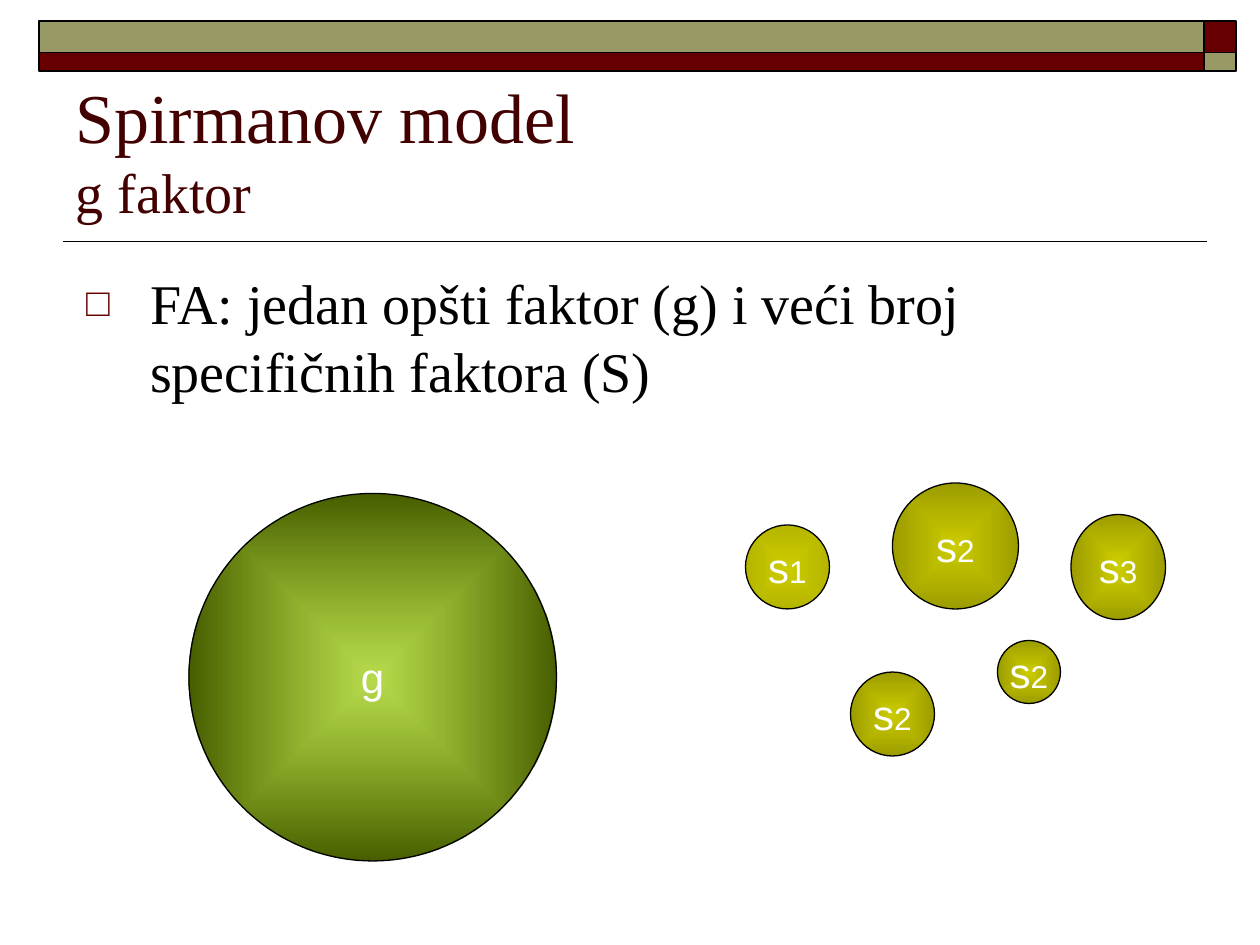
from lxml import etree
from pptx import Presentation
from pptx.dml.color import RGBColor
from pptx.enum.shapes import MSO_CONNECTOR, MSO_SHAPE
from pptx.enum.text import MSO_ANCHOR, MSO_AUTO_SIZE, PP_ALIGN
from pptx.oxml.ns import qn
from pptx.util import Pt

PX = 7620  # 120 px to the inch
SLIDE_SIZE = (1200, 900)

RECT, OVAL = MSO_SHAPE.RECTANGLE, MSO_SHAPE.OVAL
STRAIGHT = MSO_CONNECTOR.STRAIGHT
LEFT, CENTER = PP_ALIGN.LEFT, PP_ALIGN.CENTER
TOP, MIDDLE, BOTTOM = MSO_ANCHOR.TOP, MSO_ANCHOR.MIDDLE, MSO_ANCHOR.BOTTOM
NO_AUTOFIT = MSO_AUTO_SIZE.NONE

BLACK = RGBColor(0x00, 0x00, 0x00)
WHITE = RGBColor(0xFF, 0xFF, 0xFF)
MAROON = RGBColor(0x66, 0x00, 0x00)
DARK_MAROON = RGBColor(0x42, 0x00, 0x00)
KHAKI = RGBColor(0x99, 0x99, 0x66)
LIME = RGBColor(0x99, 0xCC, 0x00)
DARK_GREEN = RGBColor(0x47, 0x5E, 0x00)
YELLOW = RGBColor(0xCC, 0xCC, 0x00)
OLIVE = RGBColor(0x9C, 0x9C, 0x00)
LIGHT_OLIVE = RGBColor(0xB5, 0xB5, 0x00)

SERIF, SANS = "Times New Roman", "Arial"

TITLE, SUBTITLE = "Spirmanov model", "g faktor"
TITLE_BOX = (60, 70, 1080, 150)
BODY = "FA: jedan opšti faktor (g) i veći broj specifičnih faktora (S)"
BODY_BOX = (70, 250, 1080, 160)
BULLET_INDENT = 61
RULE = (1150, 230, 60, 230)

# Header band: columns (left, width), rows (top, height), colours by row
BAND_COLUMNS = [(37, 1110), (1147, 30)]
BAND_ROWS = [(20, 30), (50, 18)]
BAND_COLOURS = [(KHAKI, MAROON), (MAROON, KHAKI)]

# letter, index, box, centre colour, centre opacity in %, edge colour
FACTORS = [
    ("g", "", (180, 470, 350, 350), LIME, 69, DARK_GREEN),
    ("s", "1", (710, 500, 80, 80), YELLOW, 100, LIGHT_OLIVE),
    ("s", "2", (810, 640, 80, 80), YELLOW, 100, OLIVE),
    ("s", "2", (850, 460, 120, 120), YELLOW, 100, OLIVE),
    ("s", "2", (950, 610, 60, 60), YELLOW, 100, OLIVE),
    ("s", "3", (1020, 490, 90, 100), YELLOW, 100, OLIVE),
]


def emu(lengths):
    return [length * PX for length in lengths]


def add_run(paragraph, text, size):
    run = paragraph.add_run()
    run.text = text
    run.font.size = Pt(size)


def style(paragraph, face, colour, align):
    paragraph.alignment = align
    paragraph.font.name = face
    paragraph.font.color.rgb = colour


def place(placeholder, box, anchor):
    placeholder.left, placeholder.top, placeholder.width, placeholder.height = emu(box)
    frame = placeholder.text_frame
    frame.auto_size = NO_AUTOFIT
    frame.vertical_anchor = anchor
    return frame.paragraphs[0]


def add_outlined(shapes, kind, box, line_width):
    shape = shapes.add_shape(kind, *emu(box))
    shape.shadow.inherit = False
    shape.line.color.rgb = BLACK
    shape.line.width = Pt(line_width)
    return shape


def add_square_bullet(paragraph):
    props = paragraph._p.get_or_add_pPr()
    props.set("marL", str(BULLET_INDENT * PX))
    props.set("indent", str(-BULLET_INDENT * PX))
    colour = etree.SubElement(props, qn("a:buClr"))
    etree.SubElement(colour, qn("a:srgbClr"), val=str(MAROON))
    etree.SubElement(props, qn("a:buSzPct"), val="70000")
    etree.SubElement(props, qn("a:buFont"), typeface=SANS)
    etree.SubElement(props, qn("a:buChar"), char="□")


def fill_from_centre(shape, centre, opacity, edge):
    shape.fill.gradient()
    for stop, colour in zip(shape.fill.gradient_stops, (centre, edge)):
        stop.color.rgb = colour
    gradient = shape._element.spPr.find(qn("a:gradFill"))
    if opacity < 100:
        first_colour = next(gradient.iter(qn("a:srgbClr")))
        etree.SubElement(first_colour, qn("a:alpha"), val=str(opacity * 1000))
    gradient.remove(gradient.find(qn("a:lin")))
    spread = etree.SubElement(gradient, qn("a:path"), path="shape")
    etree.SubElement(spread, qn("a:fillToRect"),
                     dict.fromkeys("ltrb", "50000"))


def add_header(shapes):
    rule = shapes.add_connector(STRAIGHT, *emu(RULE))
    rule.line.color.rgb = BLACK
    rule.line.width = Pt(1)
    etree.SubElement(rule._element.spPr, qn("a:effectLst"))
    for (top, height), colours in zip(BAND_ROWS, BAND_COLOURS):
        for (left, width), colour in zip(BAND_COLUMNS, colours):
            cell = add_outlined(shapes, RECT, (left, top, width, height), 1)
            cell.fill.solid()
            cell.fill.fore_color.rgb = colour


def add_factor(shapes, letter, index, box, centre, opacity, edge):
    circle = add_outlined(shapes, OVAL, box, 0.75)
    fill_from_centre(circle, centre, opacity, edge)
    frame = circle.text_frame
    frame.word_wrap = False
    frame.vertical_anchor = MIDDLE
    label = frame.paragraphs[0]
    style(label, SANS, WHITE, CENTER)
    add_run(label, letter, 24)
    if index:
        add_run(label, index, 18)


def main():
    prs = Presentation()
    prs.slide_width, prs.slide_height = emu(SLIDE_SIZE)
    slide = prs.slides.add_slide(prs.slide_layouts[1])
    add_header(slide.shapes)

    title = place(slide.shapes.title, TITLE_BOX, BOTTOM)
    style(title, SERIF, DARK_MAROON, LEFT)
    add_run(title, TITLE, 40)
    title.add_line_break()
    add_run(title, SUBTITLE, 32)

    body = place(slide.placeholders[1], BODY_BOX, TOP)
    body.space_before = Pt(6.4)
    add_square_bullet(body)
    style(body, SERIF, BLACK, LEFT)
    add_run(body, BODY, 32)

    for factor in FACTORS:
        add_factor(slide.shapes, *factor)
    prs.save("out.pptx")


if __name__ == "__main__":
    main()
